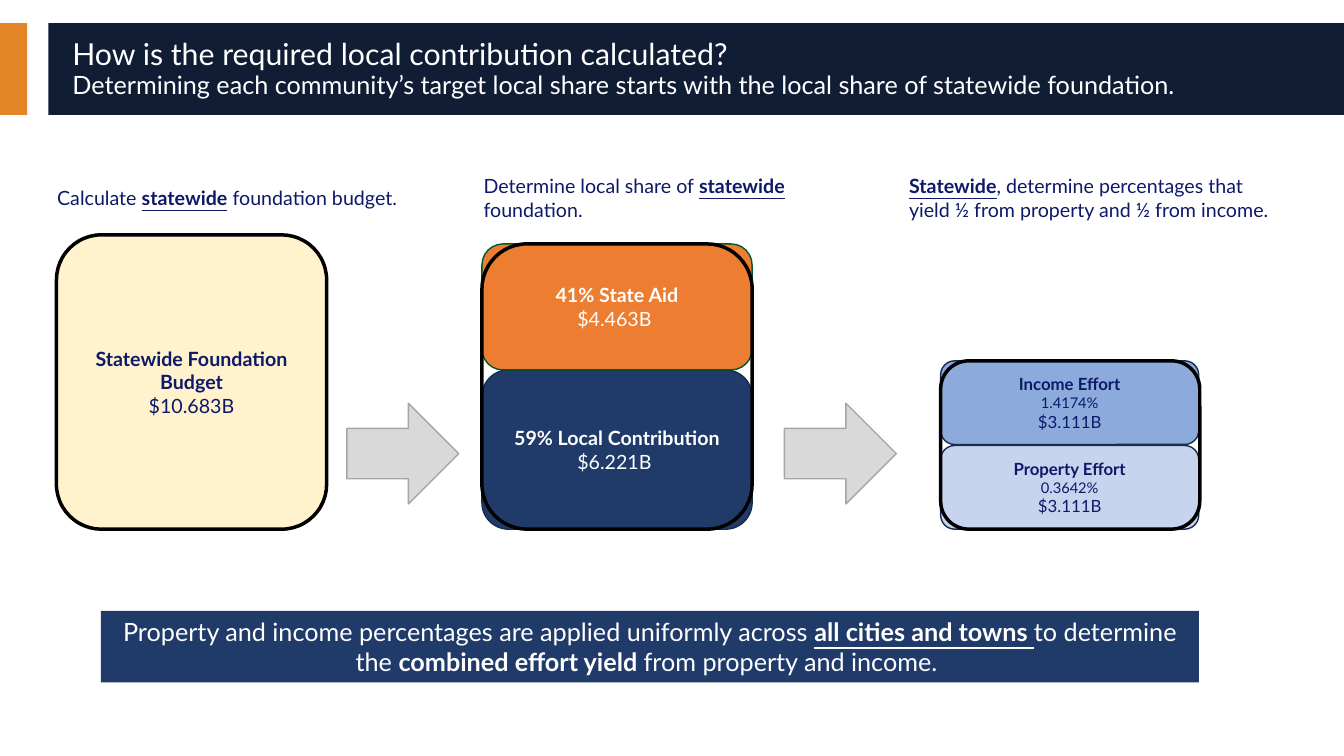
from pptx import Presentation
from pptx.dml.color import RGBColor
from pptx.enum.shapes import MSO_SHAPE
from pptx.enum.text import MSO_ANCHOR, PP_ALIGN
from pptx.util import Pt

RECT = MSO_SHAPE.RECTANGLE
ROUND = MSO_SHAPE.ROUNDED_RECTANGLE
ARROW = MSO_SHAPE.RIGHT_ARROW
LEFT, CENTER = PP_ALIGN.LEFT, PP_ALIGN.CENTER
PX = 9144  # 100 px to the inch
NAVY, BLUE, INK, WHITE, BLACK = "101D35", "203B6A", "0D1969", "FFFFFF", "000000"
EDGE = "182C4E"

prs = Presentation()
prs.slide_width, prs.slide_height = 1333 * PX, 750 * PX
s = prs.slides.add_slide(prs.slide_layouts[6])


def add_box(kind, x, y, w, h, fill=None, line=None, weight=1):
    sp = s.shapes.add_shape(kind, x * PX, y * PX, w * PX, h * PX)
    sp.shadow.inherit = False
    if fill:
        sp.fill.solid()
        sp.fill.fore_color.rgb = RGBColor.from_string(fill)
    else:
        sp.fill.background()
    if line:
        sp.line.color.rgb = RGBColor.from_string(line)
        sp.line.width = Pt(weight)
    else:
        sp.line.fill.background()
    return sp


def write(sp, paragraphs, color, align=CENTER, spacing=1.0):
    """Fill a shape with paragraphs of (text, size, style) runs; style holds b and u."""
    tf = sp.text_frame
    tf.word_wrap = True
    tf.vertical_anchor = MSO_ANCHOR.MIDDLE
    for i, runs in enumerate(paragraphs):
        p = tf.paragraphs[0] if i == 0 else tf.add_paragraph()
        p.alignment = align
        p.line_spacing = spacing
        for text, size, style in runs:
            r = p.add_run()
            r.text = text
            r.font.name = "Lato"
            r.font.size = Pt(size)
            r.font.bold = "b" in style
            r.font.underline = "u" in style
            r.font.color.rgb = RGBColor.from_string(color)


# Header
add_box(RECT, 0, 23, 27, 91, "E38526")
add_box(RECT, 48, 23, 1285, 91, NAVY)
title = s.shapes.add_textbox(62 * PX, 32 * PX, 1244 * PX, 74 * PX)
write(title, [
    [("How is the required local contribution calculated?", 21.6, "")],
    [("Determining each community’s target local share starts with "
      "the local share of statewide foundation.", 18, "")],
], WHITE, LEFT, 0.9)

# Step captions
captions = [
    (44, 389, [("Calculate ", 14, ""), ("statewide", 14, "bu"),
               (" foundation budget.", 14, "")]),
    (467, 389, [("Determine local share of ", 14, ""), ("statewide", 14, "bu"),
                (" foundation.", 14, "")]),
    (889, 400, [("Statewide", 14, "bu"),
                (", determine percentages that yield ½ from property "
                 "and ½ from income.", 14, "")]),
]
for x, w, runs in captions:
    write(add_box(ROUND, x, 167, w, 58), [runs], INK, LEFT)

# Budget, its state and local shares, and the two efforts
blocks = [
    (56, 233, 268, 292, "FFF2CC", BLACK, 2.5, INK,
     [("Statewide Foundation Budget", 14, "b"), ("$10.683B", 14, "")]),
    (478, 367, 268, 158, BLUE, EDGE, 1, WHITE,
     [("59% Local Contribution", 14, "b"), ("$6.221B ", 14, "")]),
    (478, 242, 268, 125, "ED7D31", "005828", 1, WHITE,
     [("41% State Aid", 14, "b"), ("$4.463B ", 14, "")]),
    (933, 442, 256, 83, "C6D4EE", EDGE, 1, INK,
     [("Property Effort", 12, "b"), ("0.3642%", 10.5, ""), ("$3.111B", 12, "")]),
    (933, 358, 256, 83, "8DAADC", EDGE, 1, INK,
     [("Income Effort", 12, "b"), ("1.4174%", 10.5, ""), ("$3.111B", 12, "")]),
]
for x, y, w, h, fill, line, weight, color, lines in blocks:
    sp = add_box(ROUND, x, y, w, h, fill, line, weight)
    write(sp, [[run] for run in lines], color)

# Frames around the stacked blocks
for x, y, w, h in [(478, 242, 268, 283), (933, 358, 257, 167)]:
    add_box(ROUND, x, y, w, h, None, BLACK, 2.5)

for x in (344, 778):
    add_box(ARROW, x, 400, 111, 100, "D9D9D9", "A6A6A6")

# Conclusion
banner = add_box(RECT, 100, 606, 1089, 71, BLUE)
write(banner, [[
    ("Property and income percentages are applied uniformly across ", 18, ""),
    ("all cities and towns ", 18, "bu"),
    ("to determine the ", 18, ""),
    ("combined effort yield ", 18, "b"),
    ("from property and income. ", 18, ""),
]], WHITE)

prs.save("out.pptx")
